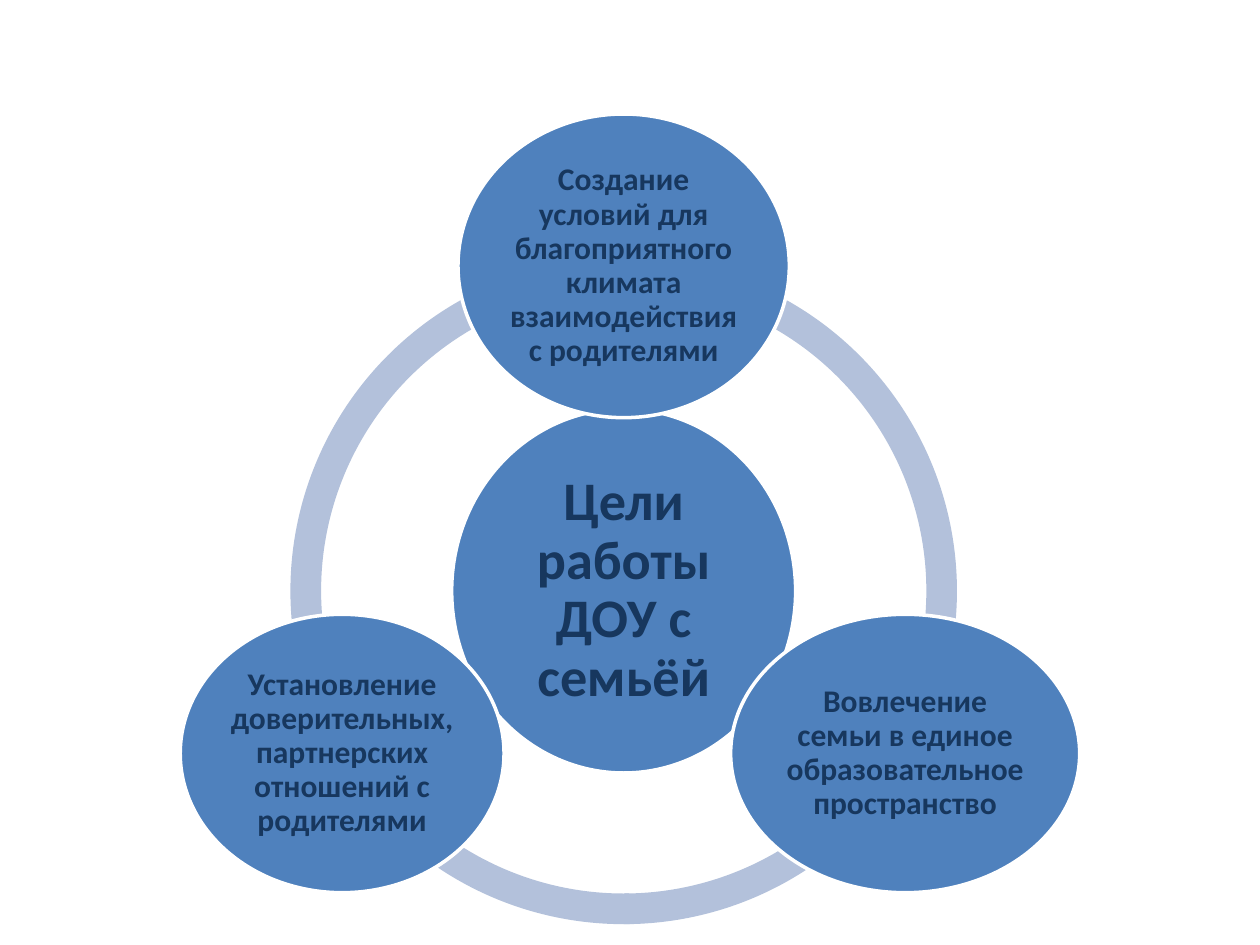
from math import cos, radians, sin

from pptx import Presentation
from pptx.dml.color import RGBColor
from pptx.enum.shapes import MSO_SHAPE as Shape
from pptx.enum.text import MSO_ANCHOR as Anchor, PP_ALIGN as Align
from pptx.util import Pt

PX = 9144  # EMU in one px, 100 px to the inch
BLUE = RGBColor(0x4F, 0x81, 0xBD)
PALE = RGBColor(0xB3, 0xC1, 0xDB)
NAVY = RGBColor(0x17, 0x37, 0x5E)
WHITE = RGBColor(0xFF, 0xFF, 0xFF)

CENTER_X, CENTER_Y = 495, 469
RING_SIZE = 529
ORBIT = 258  # distance from the centre to each goal


class SlideBuilder:
    def __init__(self, slide):
        self.slide = slide
        self.font = {"name": "Calibri", "bold": True}

    def shape(self, kind, center, size, color):
        lengths = [center[0] - size[0] / 2, center[1] - size[1] / 2, *size]
        shape = self.slide.shapes.add_shape(kind, *(round(n * PX) for n in lengths))
        shape.shadow.inherit = False
        shape.fill.solid()
        shape.fill.fore_color.rgb = color
        shape.line.fill.background()
        return shape

    def arc(self, start, end):
        arc = self.shape(Shape.BLOCK_ARC, (CENTER_X, CENTER_Y), (RING_SIZE, RING_SIZE), PALE)
        # Angles are stored in 60000ths of a degree, adjustments in 100000ths
        for index, value in enumerate((start * 0.6, end * 0.6, 0.046)):
            arc.adjustments[index] = value

    def circle(self, center, size, text, font_size):
        circle = self.shape(Shape.OVAL, center, size, BLUE)
        circle.line.color.rgb = WHITE
        circle.line.width = Pt(2)
        frame = circle.text_frame
        # No margins: the longest words need the full width inside the circle
        margins = {f"margin_{side}": 0 for side in ("left", "top", "right", "bottom")}
        for name, value in {**margins, "word_wrap": True, "vertical_anchor": Anchor.MIDDLE}.items():
            setattr(frame, name, value)
        para = frame.paragraphs[0]
        para.alignment = Align.CENTER
        para.line_spacing = 0.9
        span = para.add_run()
        span.text = text
        for name, value in {**self.font, "size": Pt(font_size)}.items():
            setattr(span.font, name, value)
        span.font.color.rgb = NAVY


def main():
    deck = Presentation()
    deck.slide_width, deck.slide_height = 1000 * PX, 750 * PX
    page = SlideBuilder(deck.slides.add_slide(deck.slide_layouts[6]))

    # Ring behind the circles; the lower arcs overlap a degree to hide the seam
    for start, end in ((89, 162), (18, 90), (162, 18)):
        page.arc(start, end)

    # Central topic
    page.circle((CENTER_X, CENTER_Y), (273, 289), "Цели работы ДОУ с семьёй", 31)

    # Goals, a third of a turn apart, clockwise from the top
    goals = [
        ((263, 241), "Создание условий для благоприятного климата взаимодействия с родителями"),
        ((277, 221), "Вовлечение семьи в единое образовательное пространство"),
        ((257, 221), "Установление доверительных, партнерских отношений с родителями"),
    ]
    for index, (size, text) in enumerate(goals):
        angle = radians(-90 + index * 360 / len(goals))
        center = (CENTER_X + ORBIT * cos(angle), CENTER_Y + ORBIT * sin(angle))
        page.circle(center, size, text, 18)

    deck.save("out.pptx")


if __name__ == "__main__":
    main()
